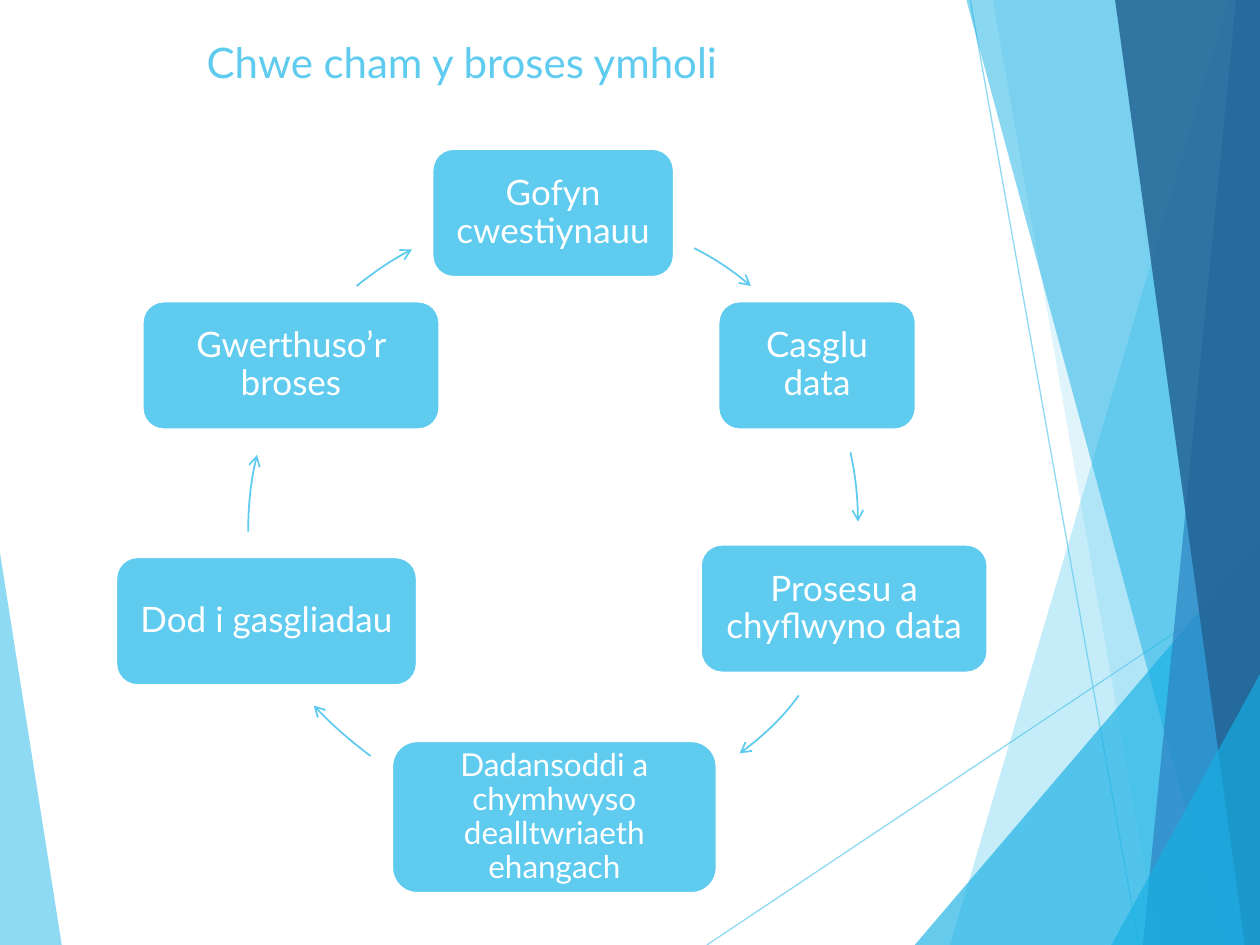
import pptx
import pptx.util
import pptx.dml.color
import pptx.enum.shapes
import pptx.enum.text
import pptx.oxml.ns
import lxml.etree

Inches = pptx.util.Inches
Pt = pptx.util.Pt
RGBColor = pptx.dml.color.RGBColor
qn = pptx.oxml.ns.qn

SKY = RGBColor(0x5F, 0xCB, 0xEF)
CYAN = RGBColor(0x17, 0xB0, 0xE4)
BLUE = RGBColor(0x2E, 0x83, 0xC3)
NAVY = RGBColor(0x22, 0x62, 0x92)
WHITE = RGBColor(0xFF, 0xFF, 0xFF)
FONT = "Lato"
WIDTH, HEIGHT = 10, 7.5

# Decorative facets: corner points, colour, opacity in percent
LEFT_FACET = ([(0, 4.39), (0.49, HEIGHT), (0, HEIGHT)], SKY, 70)
RIGHT_FACETS = [
    ([(9.75, 0), (7.54, HEIGHT), (WIDTH, HEIGHT), (WIDTH, 0)], SKY, 36),
    ([(7.88, 0), (9.19, HEIGHT), (WIDTH, HEIGHT), (WIDTH, 0)], SKY, 20),
    ([(7.26, HEIGHT), (WIDTH, 4.29), (WIDTH, HEIGHT)], CYAN, 66),
    ([(7.67, 0), (9.7, HEIGHT), (WIDTH, HEIGHT), (WIDTH, 0)], CYAN, 50),
    ([(9.81, 0), (9.07, HEIGHT), (WIDTH, HEIGHT), (WIDTH, 0)], BLUE, 70),
    ([(8.85, 0), (9.88, HEIGHT), (WIDTH, HEIGHT), (WIDTH, 0)], NAVY, 82),
    ([(8.82, HEIGHT), (WIDTH, 5.35), (WIDTH, HEIGHT)], CYAN, 66),
]
RAYS = [((5.61, 7.5), (10, 4.57)), ((7.7, 0), (9.04, 7.5))]

# Steps of the cycle, clockwise: label, left, top, width, height, text size
STEPS = [
    ("Gofyn cwestiynauu", 3.43, 1.18, 1.92, 1.02, 20),
    ("Casglu data", 5.7, 2.39, 1.57, 1.02, 20),
    ("Prosesu a chyflwyno data", 5.56, 4.32, 2.28, 1.02, 20),
    ("Dadansoddi a chymhwyso dealltwriaeth ehangach", 3.11, 5.88, 2.58, 1.21, 18),
    ("Dod i gasgliadau", 0.92, 4.42, 2.39, 1.02, 20),
    ("Gwerthuso’r broses", 1.13, 2.39, 2.36, 1.02, 20),
]
# Arrow after each step: start, two control points, end
ARROWS = [
    [(5.51, 1.97), (5.67, 2.05), (5.82, 2.15), (5.96, 2.27)],
    [(6.75, 3.59), (6.79, 3.77), (6.81, 3.95), (6.81, 4.14)],
    [(6.34, 5.52), (6.21, 5.7), (6.05, 5.85), (5.87, 5.98)],
    [(2.94, 6), (2.78, 5.88), (2.63, 5.75), (2.49, 5.6)],
    [(1.97, 4.22), (1.97, 4.01), (1.99, 3.81), (2.04, 3.61)],
    [(2.83, 2.27), (2.97, 2.16), (3.11, 2.06), (3.27, 1.98)],
]


def set_opacity(fill, percent):
    colour = fill._xPr.find(qn("a:solidFill"))[0]
    lxml.etree.SubElement(colour, qn("a:alpha"), val=str(percent * 1000))


def add_outline(slide, points, close):
    corners = [(Inches(x), Inches(y)) for x, y in points]
    builder = slide.shapes.build_freeform(*corners[0], scale=1.0)
    builder.add_line_segments(corners[1:], close=close)
    outline = builder.convert_to_shape()
    outline.shadow.inherit = False
    return outline


def add_facet(slide, points, colour, opacity):
    facet = add_outline(slide, points, close=True)
    facet.fill.solid()
    facet.fill.fore_color.rgb = colour
    set_opacity(facet.fill, opacity)
    facet.line.fill.background()


def add_ray(slide, start, end):
    ray = slide.shapes.add_connector(
        pptx.enum.shapes.MSO_CONNECTOR.STRAIGHT,
        *(Inches(value) for value in start + end))
    ray.line.width = Pt(0.75)
    ray.line.color.rgb = SKY
    set_opacity(ray.line.fill, 70)
    lxml.etree.SubElement(ray._element.spPr, qn("a:effectLst"))


def add_text(paragraph, text, size, colour):
    run = paragraph.add_run()
    run.text = text
    run.font.name = FONT
    run.font.size = Pt(size)
    run.font.color.rgb = colour


def add_step(slide, label, left, top, width, height, size):
    step = slide.shapes.add_shape(
        pptx.enum.shapes.MSO_SHAPE.ROUNDED_RECTANGLE,
        Inches(left), Inches(top), Inches(width), Inches(height))
    step.shadow.inherit = False
    step.fill.solid()
    step.fill.fore_color.rgb = SKY
    step.line.color.rgb = WHITE
    step.line.width = Pt(1.5)
    frame = step.text_frame
    frame.word_wrap = True
    frame.vertical_anchor = pptx.enum.text.MSO_ANCHOR.MIDDLE
    frame.margin_left = frame.margin_right = Inches(0.08)
    frame.margin_top = frame.margin_bottom = Inches(0.08)
    paragraph = frame.paragraphs[0]
    paragraph.alignment = pptx.enum.text.PP_ALIGN.CENTER
    paragraph.line_spacing = 0.9
    add_text(paragraph, label, size, WHITE)


def curve_point(controls, t):
    weights = ((1 - t) ** 3, 3 * t * (1 - t) ** 2, 3 * t ** 2 * (1 - t), t ** 3)
    return tuple(sum(w * c for w, c in zip(weights, axis))
                 for axis in zip(*controls))


def add_arrow(slide, controls, pieces=10):
    points = [curve_point(controls, i / pieces) for i in range(pieces + 1)]
    arrow = add_outline(slide, points, close=False)
    arrow.fill.background()
    arrow.line.color.rgb = SKY
    arrow.line.width = Pt(1)
    lxml.etree.SubElement(arrow.line._get_or_add_ln(), qn("a:tailEnd"), type="arrow")


def set_title(slide, text):
    title = slide.shapes.title
    title.left, title.top = Inches(1.54), Inches(0.24)
    title.width, title.height = Inches(6.94), Inches(1.44)
    title.text_frame.vertical_anchor = pptx.enum.text.MSO_ANCHOR.TOP
    paragraph = title.text_frame.paragraphs[0]
    paragraph.alignment = pptx.enum.text.PP_ALIGN.LEFT
    add_text(paragraph, text, 24, SKY)


def main():
    deck = pptx.Presentation()
    deck.slide_width, deck.slide_height = Inches(WIDTH), Inches(HEIGHT)
    slide = deck.slides.add_slide(deck.slide_layouts.get_by_name("Title Only"))

    # Background decoration
    add_facet(slide, *LEFT_FACET)
    for start, end in RAYS:
        add_ray(slide, start, end)
    for facet in RIGHT_FACETS:
        add_facet(slide, *facet)

    # Title and cycle of six steps
    set_title(slide, "Chwe cham y broses ymholi")
    for step, controls in zip(STEPS, ARROWS):
        add_step(slide, *step)
        add_arrow(slide, controls)

    deck.save("out.pptx")


if __name__ == "__main__":
    main()
